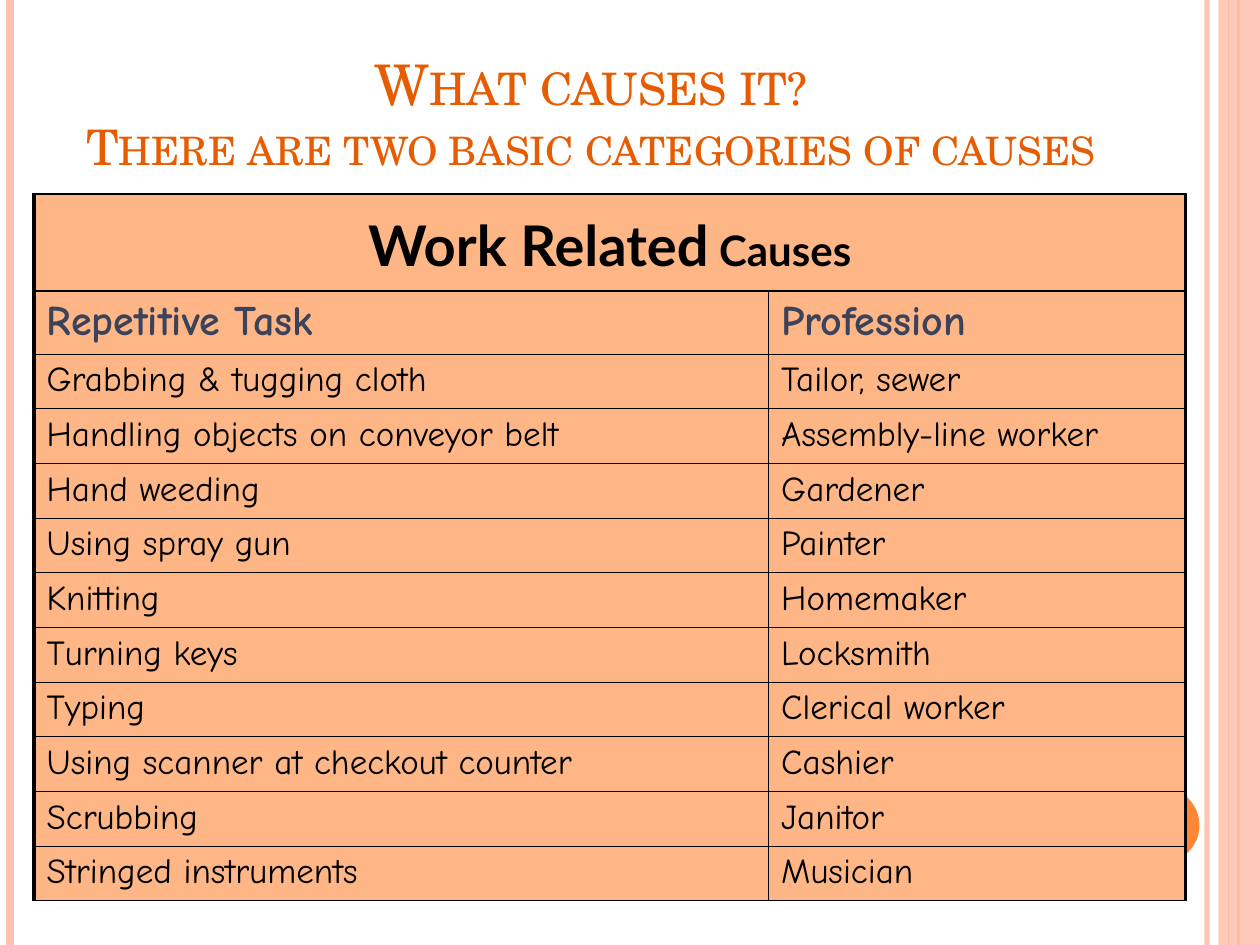
"""Build the slide on work related causes, with its cause table."""
from lxml import etree
from pptx import Presentation
from pptx import util as u
from pptx.dml import color
from pptx.enum import shapes, text
from pptx.oxml import ns

COLORS = {"title": "E75C01", "accent": "FE8637", "band": "FEC3AE",
          "cell": "FEB687", "head": "3B435B", "ink": "000000"}
CAUSES = [
    ("Repetitive Task", "Profession"),
    ("Grabbing & tugging cloth", "Tailor, sewer"),
    ("Handling objects on conveyor belt", "Assembly-line worker"),
    ("Hand weeding", "Gardener"),
    ("Using spray gun", "Painter"),
    ("Knitting", "Homemaker"),
    ("Turning keys", "Locksmith"),
    ("Typing", "Clerical worker"),
    ("Using scanner at checkout counter", "Cashier"),
    ("Scrubbing", "Janitor"),
    ("Stringed instruments", "Musician"),
]


def rgb(name):
    return color.RGBColor.from_string(COLORS[name])


def add_run(p, words, fmt, ink):
    r = p.add_run()
    r.text = words
    for key, value in fmt.items():
        setattr(r.font, key, value)
    r.font.color.rgb = rgb(ink)
    return r


prs = Presentation()
prs.slide_width, prs.slide_height = u.Inches(10), u.Inches(7.5)
s = prs.slides.add_slide(prs.slide_layouts[6])

for x, width, ink, alpha in [(9.58, 3, "band", 93), (0.08, 4.5, "band", 100),
                             (9.83, 1.5, "accent", 100), (9.75, 0.75, "accent", 100)]:
    sp = s.shapes.add_connector(shapes.MSO_CONNECTOR.STRAIGHT, u.Inches(x), 0,
                                u.Inches(x), prs.slide_height)
    sp.line.width = u.Pt(width)
    sp.line.color.rgb = rgb(ink)
    if alpha < 100:
        clr = sp.line._ln.find(".//" + ns.qn("a:srgbClr"))
        etree.SubElement(clr, ns.qn("a:alpha")).set("val", str(alpha * 1000))
    etree.SubElement(sp._element.spPr, ns.qn("a:effectLst"))

for kind, box, ink, alpha in [("RECTANGLE", (9.67, 0, 0.33, 7.5), "band", 87),
                              ("OVAL", (8.92, 6.25, 0.6, 0.6), "accent", 100)]:
    sp = s.shapes.add_shape(shapes.MSO_SHAPE[kind], *map(u.Inches, box))
    sp.shadow.inherit = False
    sp.fill.solid()
    sp.fill.fore_color.rgb = rgb(ink)
    sp.line.fill.background()
    if alpha < 100:
        clr = sp._element.spPr.find(".//" + ns.qn("a:srgbClr"))
        etree.SubElement(clr, ns.qn("a:alpha")).set("val", str(alpha * 1000))

tf = s.shapes.add_textbox(*map(u.Inches, (0.43, 0.13, 8.52, 1.31))).text_frame
tf.word_wrap = True
tf.vertical_anchor = text.MSO_ANCHOR.BOTTOM
p = tf.paragraphs[0]
p.alignment = text.PP_ALIGN.CENTER
for words, size in [("What causes it?", 32),
                    ("There are two basic categories of causes", 28)]:
    if p.runs:
        p.add_line_break()
    r = add_run(p, words, {"name": "TeX Gyre Schola", "size": u.Pt(size)}, "title")
    r._r.get_or_add_rPr().set("cap", "small")

rows = len(CAUSES) + 1
last = rows - 1
tbl = s.shapes.add_table(rows, 2, *map(u.Inches, (0.27, 1.54, 9.14, 5.6))).table
tbl.first_row = tbl.horz_banding = False
for col, width in zip(tbl.columns, (5.83, 3.31)):
    col.width = u.Inches(width)
for i, row in enumerate(tbl.rows):
    row.height = u.Inches((0.77, 0.5)[i] if i < 2 else (5.6 - 0.77 - 0.5) / (rows - 2))
    for j, cell in enumerate(row.cells):
        edges = {"lnL": 1 if j else 2,
                 "lnR": 2 if j or i == 0 else 1,
                 "lnT": 1 if i < 2 else 0.75,
                 "lnB": 1 if i in (0, last) else 0.75}
        for tag, width in edges.items():
            ln = etree.SubElement(cell._tc.get_or_add_tcPr(), ns.qn("a:" + tag))
            ln.set("w", str(u.Pt(width)))
            fill = etree.SubElement(ln, ns.qn("a:solidFill"))
            etree.SubElement(fill, ns.qn("a:srgbClr")).set("val", COLORS["ink"])
        cell.fill.solid()
        cell.fill.fore_color.rgb = rgb("cell")
        if i:
            p = cell.text_frame.paragraphs[0]
            pPr = p._p.get_or_add_pPr()
            pPr.set("marL", str(u.Inches(0.38)))
            pPr.set("indent", str(u.Inches(-0.38)))
            fmt = {"name": "Comic Neue", "size": u.Pt(24 if i == 1 else 20), "bold": i == 1}
            add_run(p, CAUSES[i - 1][j], fmt, "head" if i == 1 else "ink")
tbl.cell(0, 0).merge(tbl.cell(0, 1))

tf = s.shapes.add_textbox(*map(u.Inches, (0.51, 1.62, 8.66, 0.63))).text_frame
tf.word_wrap = True
p = tf.paragraphs[0]
p.alignment = text.PP_ALIGN.CENTER
for words, size in [("Work Related", 32), (" Causes", 24)]:
    add_run(p, words, {"name": "Lato", "size": u.Pt(size), "bold": True}, "ink")

prs.save("out.pptx")
